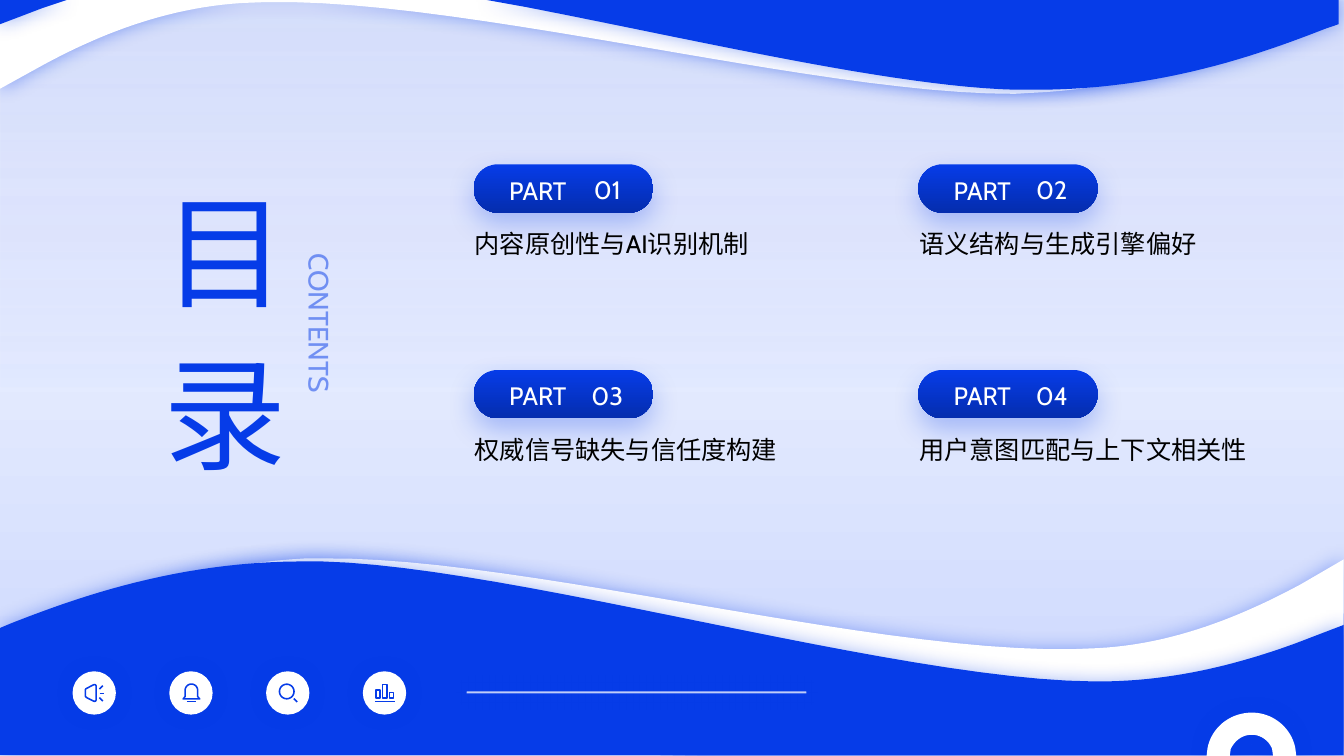
import math

from pptx import Presentation, util as u
from pptx.dml.color import RGBColor
from pptx.enum import shapes, text
from pptx.oxml.ns import qn
from lxml import etree

PX = 9144  # EMU per px, 100 px to the inch
FONT = "Cabin"
C = {"blue": "063CE8", "navy": "042DAE", "pill": "052DAE", "pale": "CAD6FE",
     "white": "FFFFFF", "black": "000000"}
GLOW = (40, 13, 0, 0)  # alpha %, blur pt, distance pt, direction degrees
PILL_SHADOW = (27, 20, 8, 90)

TITLE, SUBTITLE = "目录", "CONTENTS"
PARTS = ["内容原创性与AI识别机制", "语义结构与生成引擎偏好",
         "权威信号缺失与信任度构建", "用户意图匹配与上下文相关性"]
PART_X, PART_Y = (470, 911), (163, 367)

# Outlines in px as drawn on the slide: (path, rotation, colour)
BOTTOM_WAVES = [
    ("M 322 554 C 523 552 894 656 1089 643 C 1165 639 1232 611 1290 580 L 1333 555 "
     "L 1333 604 L 1330 736 L 643 750 L 0 750 L 0 709 L 2 652 L 25 639 "
     "C 94 601 186 560 303 554 C 309 554 316 554 322 554 Z", 355.5, "white"),
    ("M 296 557 C 304 557 312 557 320 557 C 512 562 886 674 1084 676 "
     "C 1158 677 1226 660 1286 638 L 1333 620 L 1333 749 L 0 749 L 0 623 L 12 618 "
     "C 81 591 176 558 296 557 Z", 0, "blue"),
]
TOP_WAVES = [
    ("M 0 0 L 1316 0 L 1303 7 C 1234 45 1142 87 1025 92 C 1019 92 1012 93 1006 93 "
     "C 805 94 434 -10 239 3 C 163 8 96 35 38 67 L 0 88 Z", 175.5, "white"),
    ("M 483 0 L 1328 0 L 1328 24 L 1316 28 C 1247 55 1153 88 1032 89 "
     "C 1024 89 1016 89 1008 89 C 888 86 697 41 522 7 Z "
     "M 0 0 L 66 0 L 42 8 L 0 24 Z", 180, "blue"),
]
RING = ("M 1242 707 C 1263 707 1281 722 1285 742 L 1286 750 L 1263 750 L 1262 743 "
        "C 1259 735 1251 729 1242 729 C 1232 729 1225 735 1221 743 L 1220 750 "
        "L 1197 750 L 1198 742 C 1202 722 1220 707 1242 707 Z")

# Icon strokes in tenths of a px, measured from the centre of the disc
ICONS = {
    "speaker": "M 20 -60 C 20 -85 5 -85 -8 -80 L -70 -48 C -85 -40 -88 -35 -88 -25 "
               "L -88 25 C -88 35 -85 40 -70 48 L -8 80 C 5 85 20 85 20 60 Z "
               "M 52 -38 L 85 -72 M 55 5 L 98 5 M 52 46 L 85 80",
    "bell": "M -78 60 L 86 60 L 66 35 L 66 -25 C 66 -60 39 -88 4 -88 "
            "C -31 -88 -58 -60 -58 -25 L -58 35 Z M -42 86 L 50 86",
    "search": "M 62 -15 C 62 25 30 57 -10 57 C -50 57 -82 25 -82 -15 "
              "C -82 -55 -50 -87 -10 -87 C 30 -87 62 -55 62 -15 Z M 60 55 L 94 89",
    "chart": "M -85 -30 L -47 -30 L -47 50 L -85 50 Z M -18 -85 L 22 -85 L 22 50 L -18 50 Z "
             "M 50 -5 L 90 -5 L 90 50 L 50 50 Z M -95 86 L 100 86",
}
DISC_X, DISC_Y, DISC_SIZE, DISC_STEP = 72, 666, 43, 96


def emu(*px):
    return [round(v * PX) for v in px]


def rgb(name):
    return RGBColor.from_string(C[name])


def set_alpha(root, *percents):
    for clr, pct in zip(root.iter(qn("a:srgbClr")), percents):
        etree.SubElement(clr, qn("a:alpha")).set("val", str(pct * 1000))


def set_gradient(fill, first, last, end=1.0):
    """Top-to-bottom gradient between two named colours."""
    fill.gradient()
    fill.gradient_angle = 270
    for stop, name, pos in zip(fill.gradient_stops, (first, last), (0.0, end)):
        stop.color.rgb = rgb(name)
        stop.position = pos


def style(sp, color=None, shadow=None):
    sp.line.fill.background()
    if color:
        sp.fill.solid()
        sp.fill.fore_color.rgb = rgb(color)
    sp.shadow.inherit = False
    if shadow:
        alpha, blur, dist, angle = shadow
        effects = sp._element.spPr.find(qn("a:effectLst"))
        outer = etree.SubElement(effects, qn("a:outerShdw"), blurRad=str(u.Pt(blur)),
                                 dist=str(u.Pt(dist)), dir=str(angle * 60000),
                                 algn="ctr", rotWithShape="0")
        etree.SubElement(outer, qn("a:srgbClr")).set("val", C["blue"])
        set_alpha(outer, alpha)
    return sp


def add_preset(s, kind, box, color=None, shadow=None):
    return style(s.shapes.add_shape(kind, *emu(*box)), color, shadow)


def bezier(p0, p1, p2, p3, steps=24):
    for i in range(1, steps + 1):
        t = i / steps
        w = ((1 - t) ** 3, 3 * t * (1 - t) ** 2, 3 * t * t * (1 - t), t ** 3)
        yield tuple(sum(k * p[axis] for k, p in zip(w, (p0, p1, p2, p3))) for axis in (0, 1))


def contours(outline):
    """Turn M/L/C/Z commands into (points, closed) pairs."""
    tokens, found = iter(outline.split()), []

    def point():
        return int(next(tokens)), int(next(tokens))

    for cmd in tokens:
        if cmd == "M":
            found.append([[point()], False])
        elif cmd == "L":
            found[-1][0].append(point())
        elif cmd == "C":
            pts = found[-1][0]
            pts.extend(bezier(pts[-1], point(), point(), point()))
        else:
            found[-1][1] = True
    return found


def turn(p, degrees):
    a = math.radians(degrees)
    return (p[0] * math.cos(a) - p[1] * math.sin(a), p[0] * math.sin(a) + p[1] * math.cos(a))


def add_outline(s, outline, rotation=0, origin=(0, 0), unit=1):
    """Draw an outline so that it lands in place once its shape is rotated."""
    parts = [([turn((origin[0] + x * unit, origin[1] + y * unit), -rotation)
               for x, y in pts], closed) for pts, closed in contours(outline)]
    axes = list(zip(*(p for pts, _ in parts for p in pts)))
    center = [(min(a) + max(a)) / 2 for a in axes]
    dx, dy = (new - old for new, old in zip(turn(center, rotation), center))
    builder = None
    for pts, closed in parts:
        first, *rest = [emu(x + dx, y + dy) for x, y in pts]
        if builder is None:
            builder = s.shapes.build_freeform(*first)
        else:
            builder.move_to(*first)
        builder.add_line_segments(rest, close=closed)
    sp = builder.convert_to_shape()
    sp.rotation = rotation
    return sp


def write(sp, words, size, color, spacing=1.1, centered=True):
    tf = sp.text_frame
    tf.text = words
    tf.word_wrap = True
    tf.auto_size = text.MSO_AUTO_SIZE.NONE
    tf.margin_left = tf.margin_right = tf.margin_top = tf.margin_bottom = 0
    tf.vertical_anchor = text.MSO_ANCHOR.MIDDLE if centered else text.MSO_ANCHOR.TOP
    p = tf.paragraphs[0]
    p.alignment = text.PP_ALIGN.CENTER if centered else text.PP_ALIGN.LEFT
    p.line_spacing = spacing
    r = p.runs[0]
    r.font.size = u.Pt(size)
    r.font.color.rgb = rgb(color)
    r.font.name = FONT
    etree.SubElement(r.font._element, qn("a:ea")).set("typeface", FONT)
    return r


def add_text(s, box, *args, **options):
    sp = s.shapes.add_textbox(*emu(*box))
    return sp, write(sp, *args, **options)


def add_part(s, number, caption, x, y):
    pill = add_preset(s, shapes.MSO_SHAPE.ROUNDED_RECTANGLE, (x, y, 178, 48), shadow=PILL_SHADOW)
    pill.adjustments[0] = 0.5
    set_gradient(pill.fill, "blue", "pill")
    add_text(s, (x + 4, y + 5, 119, 38), "PART", 18, "white")
    add_text(s, (x + 95, y - 10, 75, 67), f"{number:02d}", 18, "white")
    add_text(s, (x + 1, y + 55, 355, 123), caption, 18, "black", spacing=1.3, centered=False)


def main():
    prs = Presentation()
    prs.slide_width, prs.slide_height = u.Inches(40 / 3), u.Inches(7.5)
    s = prs.slides.add_slide(prs.slide_layouts[5])
    kinds = shapes.MSO_SHAPE

    backdrop, tint = (add_preset(s, kinds.RECTANGLE, (0, 0, 1334, 750)) for _ in range(2))
    set_gradient(backdrop.fill, "white", "pale")
    set_gradient(tint.fill, "blue", "blue", end=0.52)
    set_alpha(tint._element.spPr, 17, 0)

    for outline, rotation, color in BOTTOM_WAVES:
        style(add_outline(s, outline, rotation), color, GLOW)
    half = DISC_SIZE / 2
    for i, strokes in enumerate(ICONS.values()):
        x = DISC_X + i * DISC_STEP
        add_preset(s, kinds.OVAL, (x, DISC_Y, DISC_SIZE, DISC_SIZE), "white", GLOW)
        icon = style(add_outline(s, strokes, origin=(x + half, DISC_Y + half), unit=0.1))
        icon.fill.background()
        icon.line.color.rgb = rgb("blue")
        icon.line.width = u.Pt(1.1)
    rule = add_preset(s, kinds.ROUNDED_RECTANGLE, (463, 686, 337, 2), "white", GLOW)
    set_alpha(rule._element.spPr, 75)
    style(add_outline(s, RING), "white", GLOW)

    title = s.shapes.title
    title.left, title.top, title.width, title.height = emu(150, 143, 147, 355)
    r = write(title, TITLE, 88, "blue")
    set_gradient(r.font.fill, "blue", "navy")
    s.shapes._spTree.append(title._element)
    subtitle, r = add_text(s, (211, 275, 216, 91), SUBTITLE, 20, "blue")
    subtitle.rotation = 90
    set_alpha(r.font._element, 51)

    for i, caption in enumerate(PARTS):
        add_part(s, i + 1, caption, PART_X[i % 2], PART_Y[i // 2])
    for outline, rotation, color in TOP_WAVES:
        style(add_outline(s, outline, rotation), color, GLOW)
    prs.save("out.pptx")


if __name__ == "__main__":
    main()
